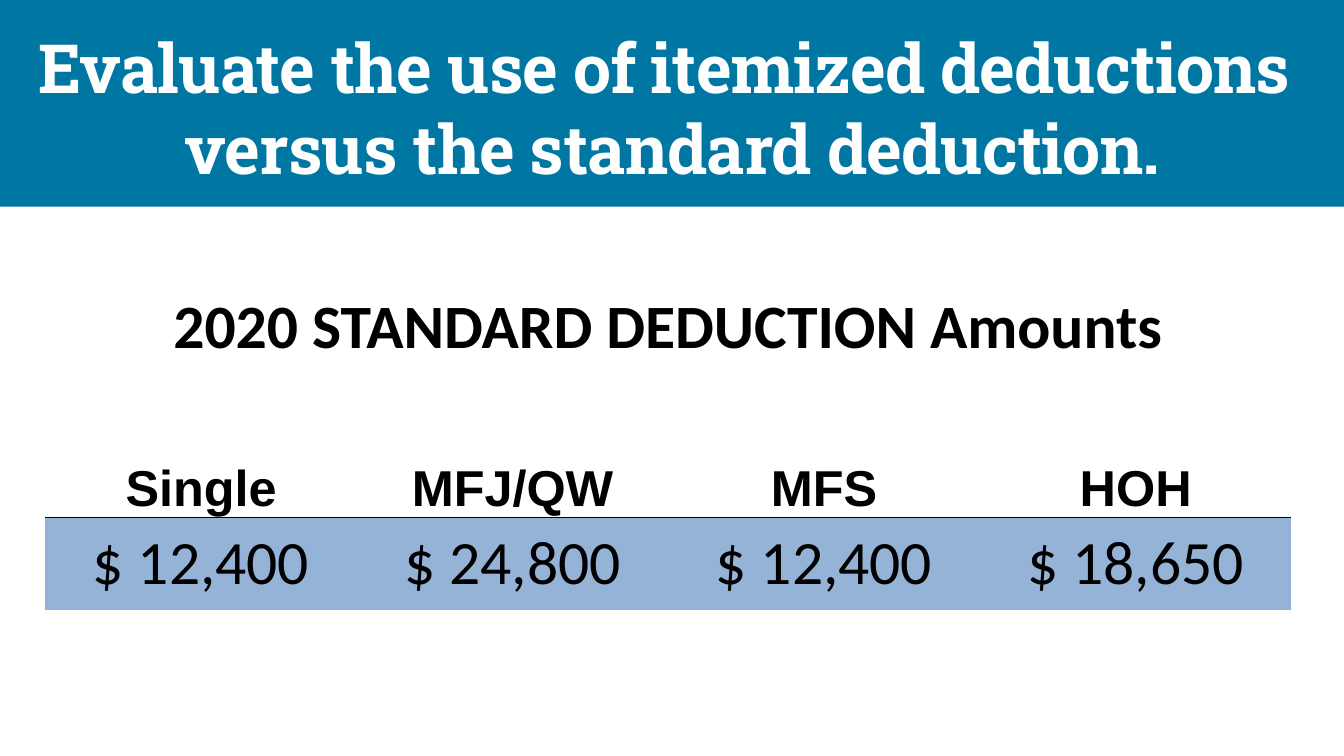
"""Build a slide showing the 2020 standard deduction amounts."""
from lxml.etree import SubElement
from pptx import Presentation
from pptx.dml.color import RGBColor
from pptx.enum.text import MSO_ANCHOR, MSO_AUTO_SIZE, PP_ALIGN
from pptx.oxml.ns import qn
from pptx.util import Inches, Pt

TITLE = "Evaluate the use of itemized deductions \vversus the standard deduction."
CAPTION = "2020 STANDARD DEDUCTION Amounts"
DEDUCTIONS = {
    "Single": "$ 12,400",
    "MFJ/QW": "$ 24,800",
    "MFS": "$ 12,400",
    "HOH": "$ 18,650",
}
COLORS = {"banner": "0076A3", "white": "FFFFFF", "black": "000000", "amount": "95B3D7"}
ROW_HEIGHTS = [1.51, 0.75, 0.92]
COLUMN_WIDTH = 3.09
NO_STYLE = "{2D5ABB26-0587-4C30-8999-92F81FD0307C}"


def write_text(frame, text, font, size, color="black", bold=True, spacing=0):
    """Write one centred, formatted paragraph into a text frame."""
    frame.word_wrap = True
    paragraph = frame.paragraphs[0]
    paragraph.text = text
    paragraph.alignment = PP_ALIGN.CENTER
    paragraph.line_spacing = 1.0
    paragraph.space_before = Pt(0)
    for run in paragraph.runs:
        run.font.name = font
        run.font.size = Pt(size)
        run.font.bold = bold
        run.font.color.rgb = RGBColor.from_string(COLORS[color])
        if spacing:
            run.font._element.set("spc", str(round(spacing * 100)))


def add_border(cell, side):
    """Draw a thin black line on one side of a cell."""
    line = SubElement(cell._tc.get_or_add_tcPr(), qn(f"a:{side}"), w=str(Pt(0.5)))
    fill = SubElement(line, qn("a:solidFill"))
    SubElement(fill, qn("a:srgbClr"), val=COLORS["black"])


def fill_cell(cell, text, font, size, fill="white", anchor=MSO_ANCHOR.BOTTOM,
              bold=True, border=None):
    """Format a table cell and write its text."""
    if border:
        add_border(cell, border)
    cell.fill.solid()
    cell.fill.fore_color.rgb = RGBColor.from_string(COLORS[fill])
    cell.margin_left = cell.margin_right = cell.margin_top = Inches(0.01)
    cell.margin_bottom = 0
    cell.vertical_anchor = anchor
    write_text(cell.text_frame, text, font, size, bold=bold)


def add_banner(slide):
    """Turn the title placeholder into the full-width banner."""
    title = slide.shapes.title
    title.left, title.top = 0, 0
    title.width, title.height = Inches(13.33), Inches(2.05)
    title.fill.solid()
    title.fill.fore_color.rgb = RGBColor.from_string(COLORS["banner"])
    frame = title.text_frame
    frame.auto_size = MSO_AUTO_SIZE.NONE
    frame.vertical_anchor = MSO_ANCHOR.TOP
    frame.margin_top = Inches(0.25)
    frame.margin_bottom = 0
    write_text(frame, TITLE, "Roboto Slab", 48.5, color="white", spacing=-0.6)


def add_deductions(slide):
    """Add the table with a caption, filing statuses and amounts."""
    count = len(DEDUCTIONS)
    table = slide.shapes.add_table(
        len(ROW_HEIGHTS), count, Inches(0.45), Inches(2.87),
        Inches(COLUMN_WIDTH * count), Inches(sum(ROW_HEIGHTS))).table
    table.first_row = table.horz_banding = False
    table._tbl.tblPr.find(qn("a:tableStyleId")).text = NO_STYLE
    for row, height in zip(table.rows, ROW_HEIGHTS):
        row.height = Inches(height)
    table.cell(0, 0).merge(table.cell(0, count - 1))
    fill_cell(table.cell(0, 0), CAPTION, "Calibri", 44, anchor=MSO_ANCHOR.TOP)
    for column, (status, amount) in enumerate(DEDUCTIONS.items()):
        table.columns[column].width = Inches(COLUMN_WIDTH)
        fill_cell(table.cell(1, column), status, "Arial", 36, border="lnB")
        fill_cell(table.cell(2, column), amount, "Calibri", 44, fill="amount",
                  anchor=MSO_ANCHOR.MIDDLE, bold=False, border="lnT")


def main():
    """Create and save the presentation."""
    presentation = Presentation()
    presentation.slide_width = Inches(13.33)
    presentation.slide_height = Inches(7.5)
    slide = presentation.slides.add_slide(presentation.slide_layouts[5])
    add_banner(slide)
    add_deductions(slide)
    presentation.save("out.pptx")


if __name__ == "__main__":
    main()
